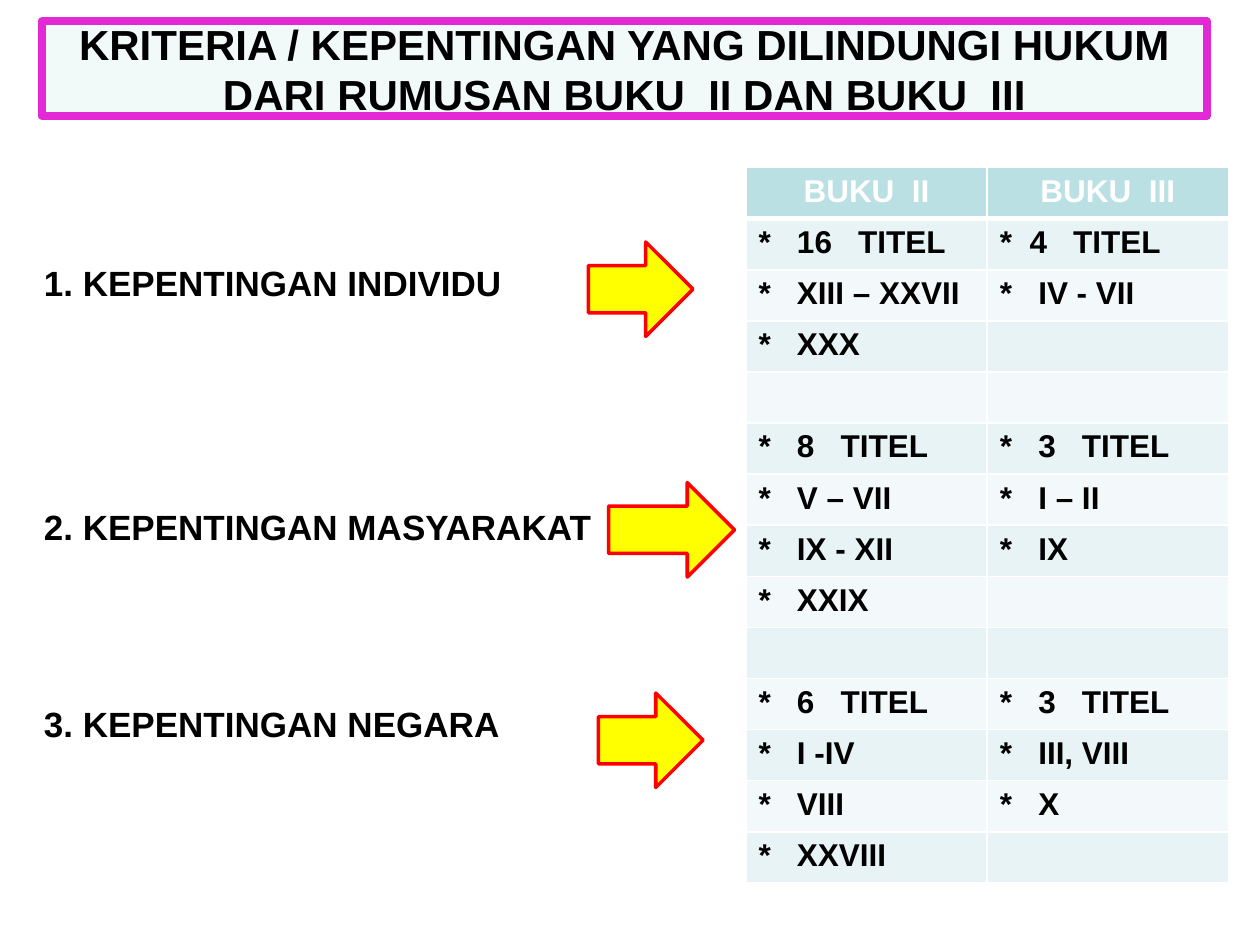
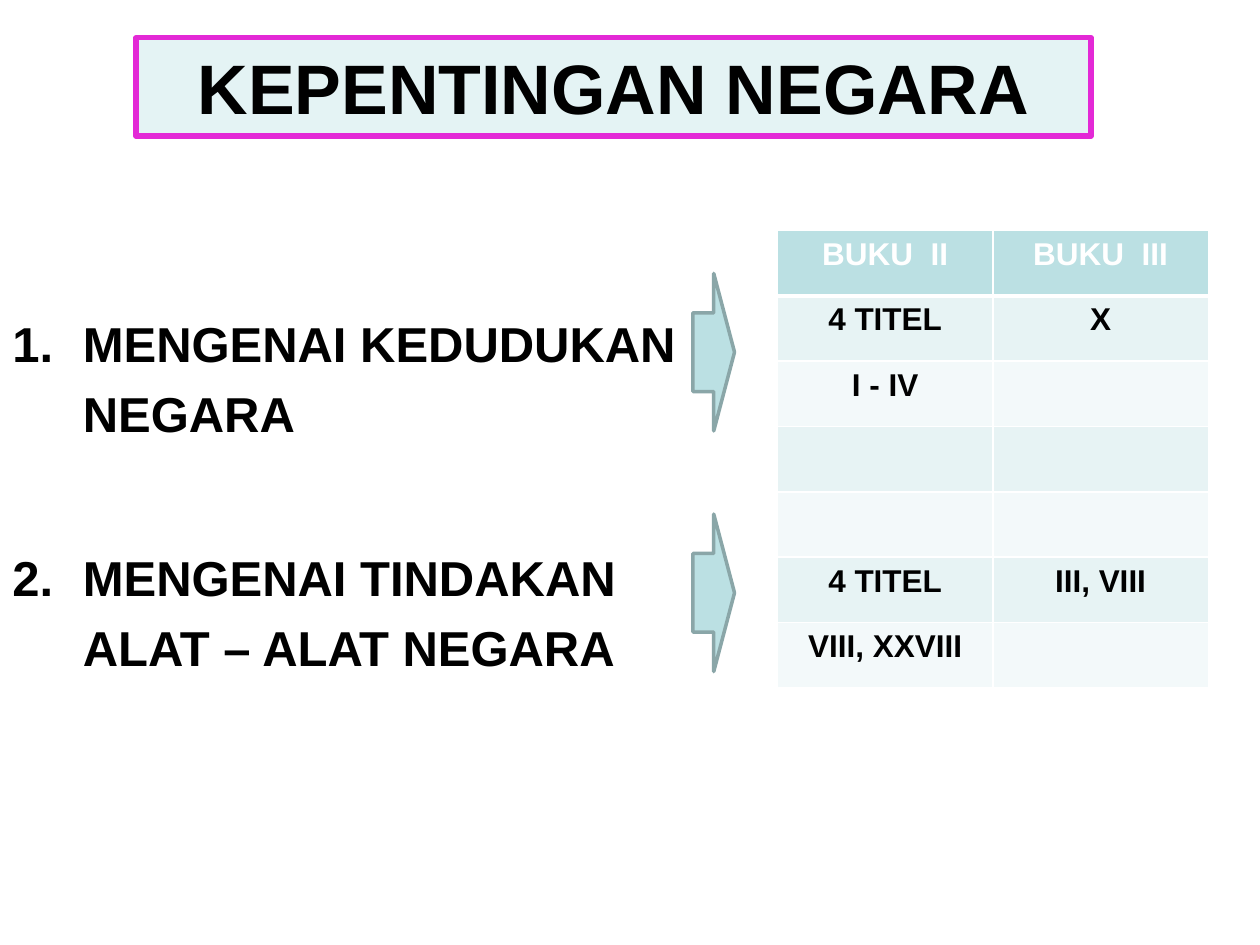
from lxml import etree
from pptx import Presentation
from pptx.dml.color import RGBColor
from pptx.enum.shapes import MSO_SHAPE
from pptx.enum.text import MSO_ANCHOR, MSO_AUTO_SIZE, PP_ALIGN
from pptx.oxml.ns import qn
from pptx.util import Inches, Pt

# Shared look
FONT = "Arial"
BLACK, WHITE = "000000", "FFFFFF"
PINK, TEAL = "E329D6", "BBE0E3"
BANDS = ["E7F3F4", "F3F9FA"]
HEAD = ["BUKU  II", "BUKU  III"]


def rgb(code):
    return RGBColor.from_string(code)


def style(para, size, color=BLACK, align=PP_ALIGN.LEFT):
    para.alignment = align
    for font in [para.font] + [run.font for run in para.runs]:
        font.name, font.size, font.bold = FONT, Pt(size), True
        font.color.rgb = rgb(color)


# Content: places are left, top, width, height in inches
# Labels hold a middle height and their lines
pages = [
    dict(
        title="KRITERIA / KEPENTINGAN YANG DILINDUNGI HUKUM "
              "DARI RUMUSAN BUKU  II DAN BUKU  III",
        place=(0.33, 0.17, 9.25, 0.75), size=24, fill="F1F9F9", edge=4.5,
        left=0.25, text=20, number=False,
        labels=[(2.24, ["1. KEPENTINGAN INDIVIDU"]),
                (4.18, ["2. KEPENTINGAN MASYARAKAT"]),
                (5.74, ["3. KEPENTINGAN NEGARA"])],
        grid=(5.92, 1.33, 3.83, 5.68), align=PP_ALIGN.LEFT,
        rows=[("*   16   TITEL", "*  4   TITEL"),
              ("*   XIII – XXVII", "*   IV - VII"),
              ("*   XXX", ""),
              ("", ""),
              ("*   8   TITEL", "*   3   TITEL"),
              ("*   V – VII", "*   I – II"),
              ("*   IX - XII", "*   IX"),
              ("*   XXIX", ""),
              ("", ""),
              ("*   6   TITEL", "*   3   TITEL"),
              ("*   I -IV", "*   III, VIII"),
              ("*   VIII", "*   X"),
              ("*   XXVIII", "")],
        arrows=[(4.67, 1.92, 0.83, 0.75), (4.83, 3.83, 1, 0.75),
                (4.75, 5.5, 0.83, 0.75)],
        paint=("FFFF00", "FF0000"),
    ),
    dict(
        title="KEPENTINGAN NEGARA",
        place=(1.08, 0.3, 7.58, 0.78), size=40, fill="E4F3F4", edge=3,
        left=0, text=28, number=True,
        labels=[(3.0, ["MENGENAI KEDUDUKAN", "NEGARA"]),
                (4.86, ["MENGENAI TINDAKAN", "ALAT – ALAT NEGARA"])],
        grid=(6.17, 1.83, 3.42, 3.63), align=PP_ALIGN.CENTER,
        rows=[("4 TITEL", "X"),
              ("I - IV", ""),
              ("", ""),
              ("", ""),
              ("4 TITEL", "III, VIII"),
              ("VIII, XXVIII", "")],
        arrows=[(5.5, 2.17, 0.33, 1.25), (5.5, 4.08, 0.33, 1.25)],
        paint=(TEAL, "8AA6A8"),
    ),
]

deck = Presentation()
deck.slide_width, deck.slide_height = Inches(10), Inches(7.5)

for page in pages:
    slide = deck.slides.add_slide(deck.slide_layouts[5])
    shapes = slide.shapes

    # Framed title
    title = shapes.title
    title.left, title.top, title.width, title.height = map(Inches, page["place"])
    title.fill.solid()
    title.fill.fore_color.rgb = rgb(page["fill"])
    title.line.color.rgb = rgb(PINK)
    title.line.width = Pt(page["edge"])
    frame = title.text_frame
    frame.text = page["title"]
    frame.word_wrap = True
    frame.auto_size = MSO_AUTO_SIZE.NONE
    frame.vertical_anchor = MSO_ANCHOR.MIDDLE
    style(frame.paragraphs[0], page["size"], align=PP_ALIGN.CENTER)

    # Labels, centred on their middle height
    for count, (mid, lines) in enumerate(page["labels"], 1):
        tall = 0.55 * len(lines)
        box = shapes.add_textbox(Inches(page["left"]), Inches(mid - tall / 2),
                                 Inches(5.6), Inches(tall))
        frame = box.text_frame
        frame.word_wrap = True
        frame.vertical_anchor = MSO_ANCHOR.MIDDLE
        frame.text = "\n".join(lines)
        for row, para in enumerate(frame.paragraphs):
            style(para, page["text"])
            if row:
                para.space_before = Pt(6.4)
            if page["number"]:
                props = para._p.get_or_add_pPr()
                props.set("marL", str(Inches(0.56)))
                props.set("indent", str(0 if row else -Inches(0.56)))
                if not row:
                    etree.SubElement(props, qn("a:buFont"), typeface="+mj-lt")
                    etree.SubElement(props, qn("a:buAutoNum"),
                                     type="arabicPeriod", startAt=str(count))

    # Table with banded rows and white rules
    rows = [HEAD] + page["rows"]
    left, top, wide, tall = page["grid"]
    table = shapes.add_table(len(rows), 2, Inches(left), Inches(top),
                             Inches(wide), Inches(tall)).table
    for r, row in enumerate(rows):
        table.rows[r].height = Inches(tall / len(rows))
        for c, text in enumerate(row):
            cell = table.cell(r, c)
            cell.text = text
            style(cell.text_frame.paragraphs[0], 18, BLACK if r else WHITE,
                  page["align"] if r else PP_ALIGN.CENTER)
            props = cell._tc.get_or_add_tcPr()
            for side in ("L", "R", "T", "B"):
                thick = 3 if (r, side) in ((0, "B"), (1, "T")) else 1
                rule = etree.SubElement(props, qn("a:ln" + side),
                                        w=str(Pt(thick)))
                solid = etree.SubElement(rule, qn("a:solidFill"))
                etree.SubElement(solid, qn("a:srgbClr"), val=WHITE)
            cell.fill.solid()
            cell.fill.fore_color.rgb = rgb(BANDS[(r - 1) % 2] if r else TEAL)

    # Arrows from labels to table
    fill, edge = page["paint"]
    for place in page["arrows"]:
        arrow = shapes.add_shape(MSO_SHAPE.RIGHT_ARROW, *map(Inches, place))
        arrow.shadow.inherit = False
        arrow.fill.solid()
        arrow.fill.fore_color.rgb = rgb(fill)
        arrow.line.color.rgb = rgb(edge)
        arrow.line.width = Pt(2)

deck.save("out.pptx")
